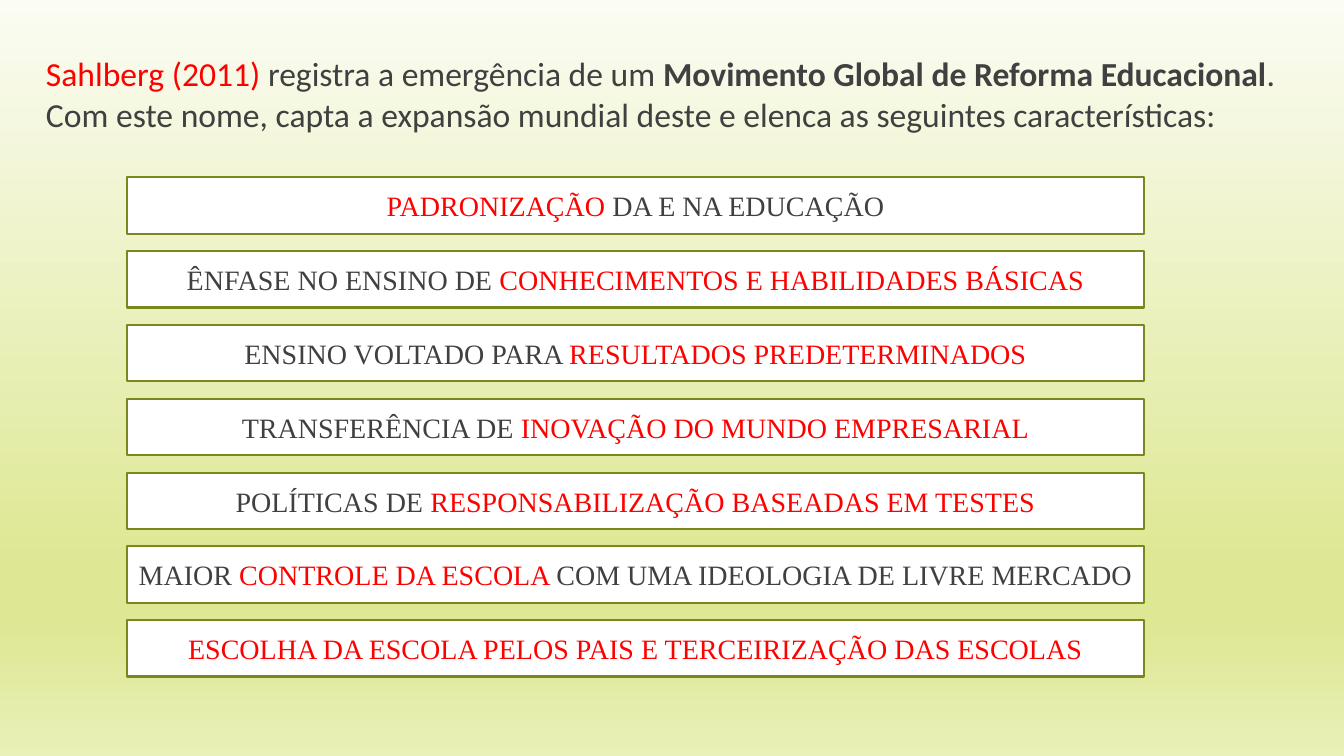
import copy

import pptx
import pptx.dml.color
import pptx.enum.shapes
import pptx.enum.text
import pptx.util

Cm = pptx.util.Cm
Pt = pptx.util.Pt
RGBColor = pptx.dml.color.RGBColor

RED = RGBColor(0xFF, 0x00, 0x00)
GRAY = RGBColor(0x40, 0x40, 0x40)
WHITE = RGBColor(0xFF, 0xFF, 0xFF)
OLIVE = RGBColor(0x7B, 0x87, 0x1D)
BACKGROUND_STOPS = [
    (0, RGBColor(0xFB, 0xFC, 0xF3)),
    (0.74, RGBColor(0xDE, 0xE8, 0x94)),
    (0.83, RGBColor(0xDE, 0xE8, 0x94)),
    (1, RGBColor(0xE9, 0xF0, 0xB8)),
]

FEATURES = [
    [("PADRONIZAÇÃO", RED), (" DA E NA EDUCAÇÃO", GRAY)],
    [("ÊNFASE NO ENSINO DE ", GRAY), ("CONHECIMENTOS E HABILIDADES BÁSICAS", RED)],
    [("ENSINO VOLTADO PARA ", GRAY), ("RESULTADOS PREDETERMINADOS", RED)],
    [("TRANSFERÊNCIA DE ", GRAY), ("INOVAÇÃO DO MUNDO EMPRESARIAL", RED)],
    [("POLÍTICAS DE ", GRAY), ("RESPONSABILIZAÇÃO BASEADAS EM TESTES", RED)],
    [("MAIOR ", GRAY), ("CONTROLE DA ESCOLA ", RED),
     ("COM UMA IDEOLOGIA DE LIVRE MERCADO", GRAY)],
    [("ESCOLHA DA ESCOLA PELOS PAIS E TERCEIRIZAÇÃO DAS ESCOLAS", RED)],
]
INTRO = [
    ("Sahlberg (2011) ", RED),
    ("registra a emergência de um ", GRAY),
    ("Movimento Global de Reforma Educacional", GRAY),
    (". Com este nome, capta a expansão mundial deste e elenca as seguintes "
     "características:", GRAY),
]
INTRO_BOLD = 2

BOX_LEFT, BOX_TOP, BOX_WIDTH, BOX_HEIGHT = 3.2, 4.47, 25.63, 1.42
BOX_PITCH = 1.86


def add_runs(p, parts, font_name, size):
    p.font.name = font_name
    p.font.size = Pt(size)
    for text, color in parts:
        r = p.add_run()
        r.text = text
        r.font.color.rgb = color


prs = pptx.Presentation()
prs.slide_width = Cm(33.87)
prs.slide_height = Cm(19.05)
s = prs.slides.add_slide(prs.slide_layouts[6])

# Background gradient, top to bottom
fill = s.background.fill
fill.gradient()
fill.gradient_angle = 270
stop_list = s.element.xpath(".//a:gsLst")[0]
while len(stop_list) < len(BACKGROUND_STOPS):
    stop_list.append(copy.deepcopy(stop_list[0]))
for stop, (position, color) in zip(fill.gradient_stops, BACKGROUND_STOPS):
    stop.position = position
    stop.color.rgb = color

# One box per feature
for i, parts in enumerate(FEATURES):
    sp = s.shapes.add_shape(
        pptx.enum.shapes.MSO_SHAPE.RECTANGLE,
        Cm(BOX_LEFT), Cm(BOX_TOP + i * BOX_PITCH), Cm(BOX_WIDTH), Cm(BOX_HEIGHT))
    sp.shadow.inherit = False
    sp.fill.solid()
    sp.fill.fore_color.rgb = WHITE
    sp.line.color.rgb = OLIVE
    sp.line.width = Pt(1.5)
    tf = sp.text_frame
    tf.word_wrap = True
    tf.vertical_anchor = pptx.enum.text.MSO_ANCHOR.MIDDLE
    p = tf.paragraphs[0]
    p.alignment = pptx.enum.text.PP_ALIGN.CENTER
    add_runs(p, parts, "Times New Roman", 20)

# Introduction
sp = s.shapes.add_textbox(Cm(0.91), Cm(1.22), Cm(32.18), Cm(2.31))
tf = sp.text_frame
tf.word_wrap = True
tf.auto_size = pptx.enum.text.MSO_AUTO_SIZE.SHAPE_TO_FIT_TEXT
p = tf.paragraphs[0]
add_runs(p, INTRO, "Calibri", 24)
p.runs[INTRO_BOLD].font.bold = True

prs.save("out.pptx")
